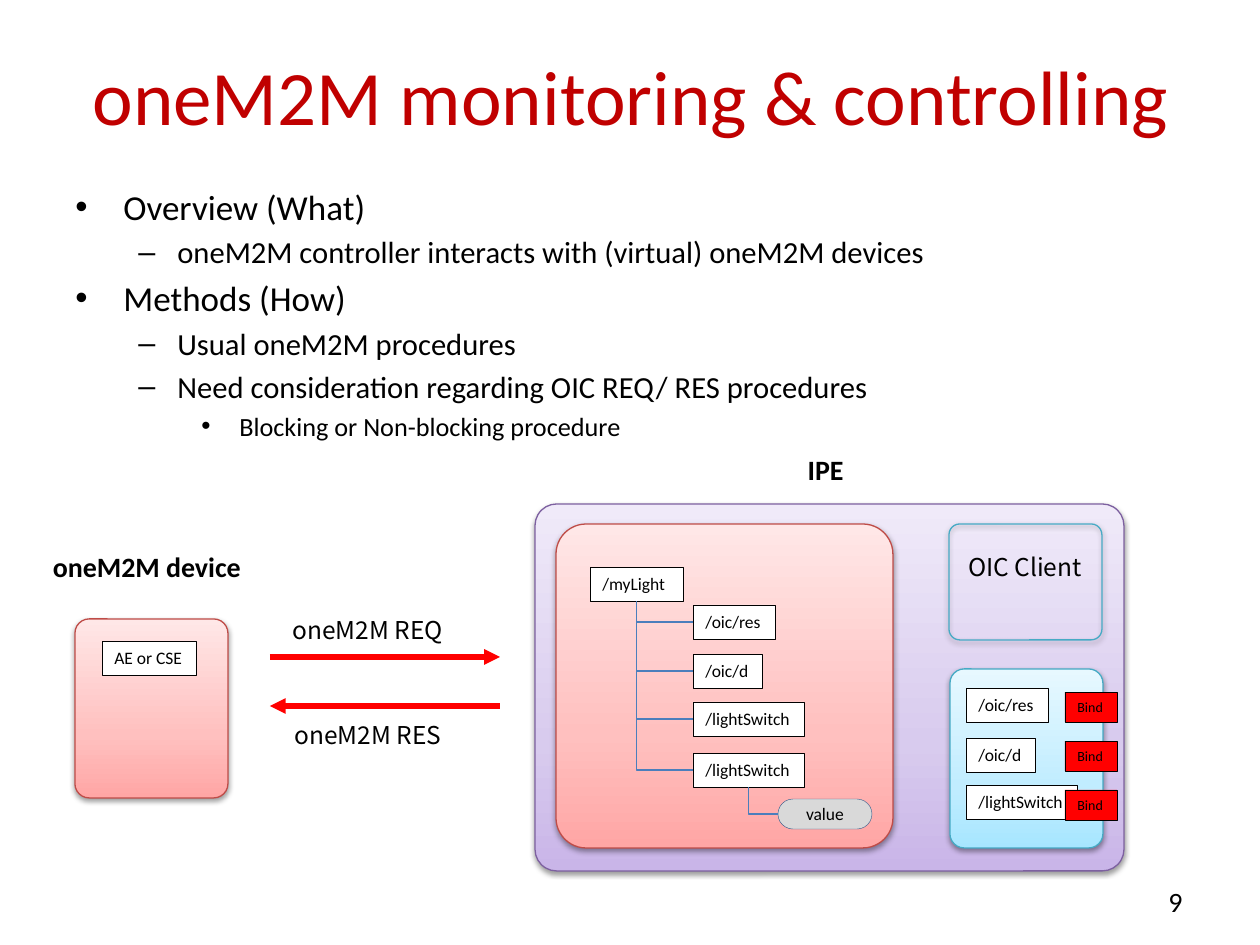
from copy import deepcopy
from dataclasses import dataclass

from lxml.etree import SubElement
from pptx import Presentation
from pptx.dml.color import RGBColor
from pptx.enum.shapes import MSO_CONNECTOR as LINK, MSO_SHAPE as SHAPE
from pptx.enum.text import MSO_ANCHOR as ANCHOR, PP_ALIGN as ALIGN
from pptx.oxml.ns import qn
from pptx.util import Emu, Pt


@dataclass(frozen=True)
class Theme:
    font: str = "Calibri"
    label_font: str = "Noto Sans CJK KR"
    title: str = "C00000"
    black: str = "000000"
    white: str = "FFFFFF"
    red: str = "FF0000"
    gray: str = "D9D9D9"
    pill_edge: str = "3A5F8C"
    branch: str = "4B7EBC"
    purple_edge: str = "7D60A0"
    pink_edge: str = "BF4C48"
    cyan_edge: str = "46AAC5"
    purple: tuple = ("C9B5E8", "D8CBEE", "F0EAF9")
    pink: tuple = ("FFA6A5", "FFC0BF", "FFE7E7")
    cyan: tuple = ("A7E6FF", "C1EDFF", "E7F8FF")
    title_size: float = 44
    level_sizes: tuple = (20, 17.5, 15)
    heading_size: float = 16
    label_size: float = 14
    node_size: float = 10
    bind_size: float = 8


THEME = Theme()
GRADIENT_STOPS = (0, 0.35, 1)
# Bullet, left margin and hanging indent of each outline level
LEVELS = (("•", 48, 48), ("–", 102, 39), ("•", 158, 32))
OUTLINE = (
    (0, "Overview (What)"),
    (1, "oneM2M controller interacts with (virtual) oneM2M devices"),
    (0, "Methods (How)"),
    (1, "Usual oneM2M procedures"),
    (1, "Need consideration regarding OIC REQ/ RES procedures"),
    (2, " Blocking or Non-blocking procedure"),
)
NODE_HEIGHT = 34
NODE_WIDTHS = {"/myLight": 93, "/oic/res": 82, "/oic/d": 69,
               "/lightSwitch": 111, "AE or CSE": 94}


def px(length):
    return Emu(round(length * 914400 / 126))


def rgb(color):
    return RGBColor.from_string(color)


def write(frame, text, size, font=THEME.font, color=THEME.black, bold=False,
          align=ALIGN.LEFT, anchor=ANCHOR.TOP, wrap=True):
    """Fill the first empty paragraph of the frame, or add one."""
    frame.word_wrap = wrap
    frame.vertical_anchor = anchor
    paragraph = frame.paragraphs[-1]
    if paragraph.runs:
        paragraph = frame.add_paragraph()
    paragraph.alignment = align
    run = paragraph.add_run()
    run.text = text
    run.font.size, run.font.name, run.font.bold = Pt(size), font, bold
    run.font.color.rgb = rgb(color)
    return paragraph


def add_label(slide, box, text, size, **text_format):
    frame = slide.shapes.add_textbox(*map(px, box)).text_frame
    write(frame, text, size, **text_format)


def add_outline(slide, box):
    frame = slide.shapes.add_textbox(*map(px, box)).text_frame
    for level, text in OUTLINE:
        bullet, margin, hanging = LEVELS[level]
        size = THEME.level_sizes[level]
        paragraph = write(frame, text, size)
        paragraph.level = level
        paragraph.space_before = Pt(size * 0.2)
        properties = paragraph._p.get_or_add_pPr()
        properties.set("marL", str(px(margin)))
        properties.set("indent", str(-px(hanging)))
        SubElement(properties, qn("a:buFont"), typeface="Arial")
        SubElement(properties, qn("a:buChar"), char=bullet)


def add_outlined(slide, kind, box, edge, weight):
    shape = slide.shapes.add_shape(kind, *map(px, box))
    shape.shadow.inherit = False
    shape.line.color.rgb = rgb(edge)
    shape.line.width = Pt(weight)
    return shape


def add_panel(slide, box, edge, colors=None, corner=0.093):
    """Rounded panel with a soft shadow; colors run from bottom to top."""
    panel = add_outlined(slide, SHAPE.ROUNDED_RECTANGLE, box, edge, 0.75)
    panel.adjustments[0] = corner
    properties = panel._element.spPr
    if colors:
        panel.fill.gradient()
        panel.fill.gradient_angle = 90
        stop_list = properties.find(".//" + qn("a:gsLst"))
        stop_list.append(deepcopy(stop_list[0]))
        for stop, position, color in zip(panel.fill.gradient_stops, GRADIENT_STOPS, colors):
            stop.position = position
            stop.color.rgb = rgb(color)
    else:
        panel.fill.background()
    shadow = SubElement(properties.find(qn("a:effectLst")), qn("a:outerShdw"),
                        blurRad="40000", dist="20000", dir="5400000", rotWithShape="0")
    tint = SubElement(shadow, qn("a:srgbClr"), val=THEME.black)
    SubElement(tint, qn("a:alpha"), val="38000")


def add_tag(slide, box, text, size=THEME.node_size, fill=THEME.white,
            edge=THEME.black, kind=SHAPE.RECTANGLE, **text_format):
    tag = add_outlined(slide, kind, box, edge, 0.25)
    tag.fill.solid()
    tag.fill.fore_color.rgb = rgb(fill)
    write(tag.text_frame, text, size, wrap=False, **text_format)
    return tag


def add_node(slide, left, top, text):
    return add_tag(slide, (left, top, NODE_WIDTHS[text], NODE_HEIGHT), text)


def add_line(slide, kind, start, end, color, weight):
    line = slide.shapes.add_connector(kind, *map(px, start + end))
    line.line.color.rgb = rgb(color)
    line.line.width = Pt(weight)
    SubElement(line._element.spPr, qn("a:effectLst"))
    return line


def add_branch(slide, parent, child):
    """One-bend link from the child's left side to the parent's bottom."""
    branch = add_line(slide, LINK.ELBOW, (1, 1), (0, 0), THEME.branch, 0.75)
    branch.begin_connect(child, 1)
    branch.end_connect(parent, 2)
    branch._element.spPr.find(qn("a:prstGeom")).set("prst", "bentConnector2")


def add_arrow(slide, start, end):
    arrow = add_line(slide, LINK.STRAIGHT, start, end, THEME.red, 3)
    SubElement(arrow.line._get_or_add_ln(), qn("a:tailEnd"), type="triangle")


def add_resource_tree(slide):
    root = add_node(slide, 590, 567, "/myLight")
    rows = zip((605, 654, 702, 753), ("/oic/res", "/oic/d", "/lightSwitch", "/lightSwitch"))
    for top, name in rows:
        node = add_node(slide, 693, top, name)
        add_branch(slide, root, node)
    value = add_tag(slide, (778, 799, 94, 30), "value", fill=THEME.gray,
                    edge=THEME.pill_edge, kind=SHAPE.ROUNDED_RECTANGLE,
                    align=ALIGN.CENTER, anchor=ANCHOR.MIDDLE)
    value.adjustments[0] = 0.5
    add_branch(slide, node, value)


def add_bound_resources(slide):
    rows = zip((688, 738, 785), ("/oic/res", "/oic/d", "/lightSwitch"))
    for index, (top, name) in enumerate(rows):
        add_node(slide, 966, top, name)
        add_tag(slide, (1065, 692 + 49 * index, 52, 30), "Bind",
                size=THEME.bind_size, fill=THEME.red)


def add_ipe(slide):
    add_panel(slide, (535, 504, 589, 367), THEME.purple_edge, THEME.purple, corner=0.059)
    add_panel(slide, (949, 524, 153, 116), THEME.cyan_edge)
    add_label(slide, (941, 546, 168, 43), "OIC Client", THEME.label_size,
              font=THEME.label_font, align=ALIGN.CENTER)
    add_panel(slide, (950, 669, 153, 179), THEME.cyan_edge, THEME.cyan)
    add_bound_resources(slide)
    add_panel(slide, (556, 524, 337, 324), THEME.pink_edge, THEME.pink)
    add_resource_tree(slide)


def add_device(slide):
    add_panel(slide, (75, 619, 153, 179), THEME.pink_edge, THEME.pink)
    add_node(slide, 102, 641, "AE or CSE")


def main():
    deck = Presentation()
    deck.slide_width, deck.slide_height = px(1260), px(945)
    slide = deck.slides.add_slide(deck.slide_layouts[6])

    add_label(slide, (-20, 42, 1302, 105), "oneM2M monitoring & controlling",
              THEME.title_size, color=THEME.title, align=ALIGN.CENTER, anchor=ANCHOR.MIDDLE)
    add_outline(slide, (63, 179, 1145, 252))
    add_ipe(slide)
    add_device(slide)
    for box, heading in (((748, 431, 155, 77), "IPE"), ((34, 528, 226, 77), "oneM2M device")):
        add_label(slide, box, heading, THEME.heading_size, bold=True,
                  align=ALIGN.CENTER, anchor=ANCHOR.MIDDLE)

    add_arrow(slide, (270, 657), (500, 657))
    add_arrow(slide, (500, 706), (270, 706))
    for top, message in ((609, "oneM2M REQ"), (714, "oneM2M RES")):
        add_label(slide, (249, top, 238, 43), message, THEME.label_size,
                  font=THEME.label_font, align=ALIGN.CENTER)
    add_label(slide, (1137, 878, 58, 47), "9", THEME.heading_size,
              align=ALIGN.RIGHT, wrap=False)
    deck.save("out.pptx")


if __name__ == "__main__":
    main()
